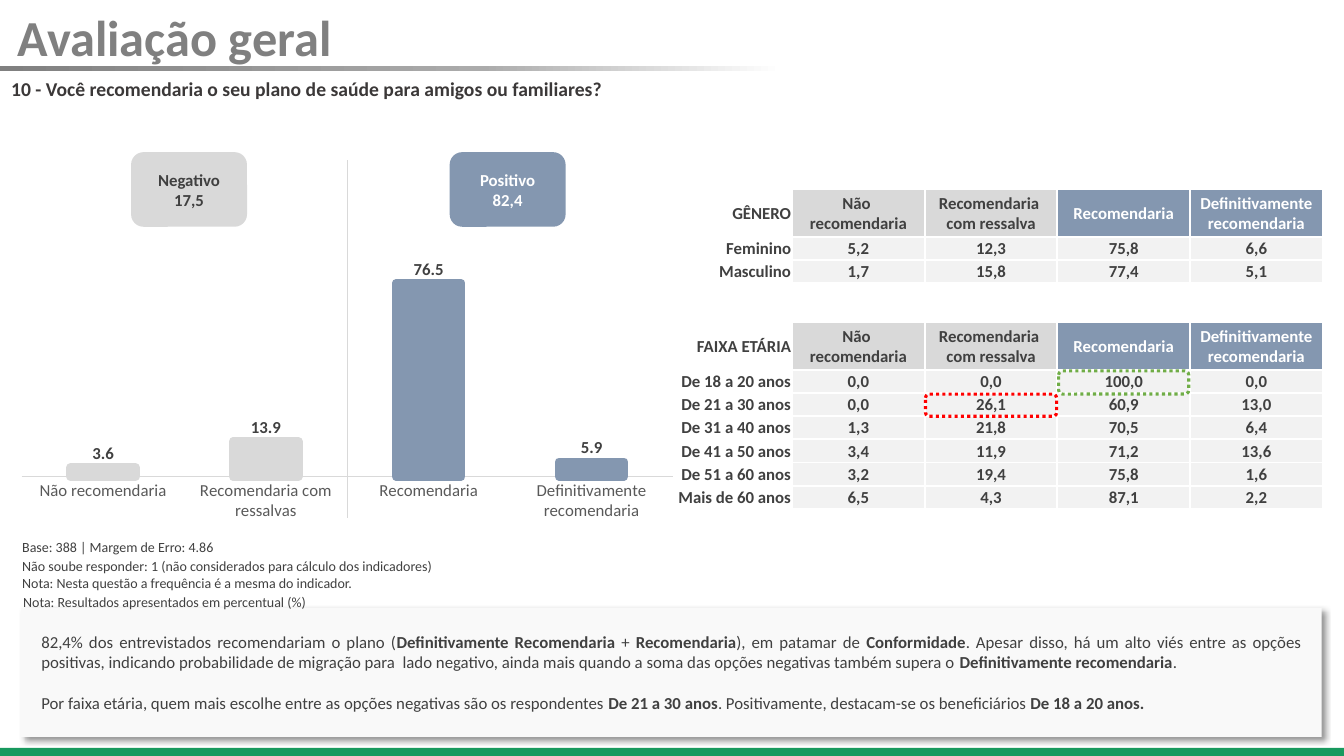
import dataclasses

import lxml.etree
import pptx
import pptx.chart.data
import pptx.dml.color
import pptx.enum.chart
import pptx.enum.dml
import pptx.enum.shapes
import pptx.enum.text
import pptx.oxml
import pptx.oxml.ns
import pptx.util

Inches, Pt = pptx.util.Inches, pptx.util.Pt
RGB = pptx.dml.color.RGBColor.from_string
Align, Anchor = pptx.enum.text.PP_ALIGN, pptx.enum.text.MSO_ANCHOR
Shape = pptx.enum.shapes.MSO_SHAPE
NS = 'xmlns:a="http://schemas.openxmlformats.org/drawingml/2006/main"'


@dataclasses.dataclass(frozen=True)
class Theme:
    font: str = "Calibri"
    title: int = 36
    question: int = 14
    body: int = 12
    note: int = 10
    gray: str = "808080"
    ink: str = "3B3838"
    text: str = "404040"
    axis_text: str = "595959"
    negative: str = "D9D9D9"
    positive: str = "8497B0"
    cell: str = "F2F2F2"
    panel: str = "F9F9F9"
    white: str = "FFFFFF"
    green: str = "18995E"
    high: str = "70AD47"
    low: str = "FF0000"


@dataclasses.dataclass(frozen=True)
class Box:
    left: float
    top: float
    width: float
    height: float

    def emu(self) -> tuple:
        return tuple(Inches(v) for v in (self.left, self.top, self.width, self.height))


@dataclasses.dataclass(frozen=True)
class Badge:
    text: str
    left: float
    fill: str
    color: str


@dataclasses.dataclass(frozen=True)
class Highlight:
    box: Box
    color: str


T = Theme()
HEADS = ["Não \nrecomendaria", "Recomendaria \ncom ressalva", "Recomendaria",
         "Definitivamente\nrecomendaria"]
SHADES = [T.negative, T.negative, T.positive, T.positive]
PROFILE = [
    ["GÊNERO", *HEADS],
    ["Feminino", "5,2", "12,3", "75,8", "6,6"],
    ["Masculino", "1,7", "15,8", "77,4", "5,1"],
    [],
    ["FAIXA ETÁRIA", *HEADS],
    ["De 18 a 20 anos", "0,0", "0,0", "100,0", "0,0"],
    ["De 21 a 30 anos", "0,0", "26,1", "60,9", "13,0"],
    ["De 31 a 40 anos", "1,3", "21,8", "70,5", "6,4"],
    ["De 41 a 50 anos", "3,4", "11,9", "71,2", "13,6"],
    ["De 51 a 60 anos", "3,2", "19,4", "75,8", "1,6"],
    ["Mais de 60 anos", "6,5", "4,3", "87,1", "2,2"],
]
NOTES = [
    ["Base: 388 | Margem de Erro: 4.86"],
    ["Não soube responder: 1 (não considerados para cálculo dos indicadores)",
     "Nota: Nesta questão a frequência é a mesma do indicador."],
    ["Nota: Resultados apresentados em percentual (%)"],
]
RATINGS = {"Não recomendaria": 3.6, "Recomendaria com ressalvas": 13.9,
           "Recomendaria": 76.5, "Definitivamente recomendaria": 5.9}
# Every second piece of a paragraph is bold.
FINDINGS = [
    ["82,4% dos entrevistados recomendariam o plano (", "Definitivamente Recomendaria ", "+",
     " Recomendaria", "), em patamar de ", "Conformidade",
     ". Apesar disso, há um alto viés entre as opções positivas, indicando probabilidade de "
     "migração para  lado negativo, ainda mais quando a soma das opções negativas também supera o ",
     "Definitivamente recomendaria", "."],
    ["Por faixa etária, quem mais escolhe entre as opções negativas são os respondentes ",
     "De 21 a 30 anos", ". Positivamente, destacam-se os beneficiários ", "De 18 a 20 anos."],
]
BADGES = [Badge("Positivo\n82,4", 4.46, T.positive, T.white),
          Badge("Negativo\n17,5", 1.3, T.negative, T.text)]
HIGHLIGHTS = [Highlight(Box(9.18, 3.91, 1.3, 0.22), T.low),
              Highlight(Box(10.5, 3.68, 1.29, 0.23), T.high)]


def style(font, size: int, color: str, bold: bool = False) -> None:
    font.name, font.size, font.bold = T.font, Pt(size), bold
    font.color.rgb = RGB(color)


def write(p, text: str, size: int, color: str, bold: bool = False, align=Align.LEFT) -> None:
    p.text, p.alignment = text, align
    for r in p.runs:
        style(r.font, size, color, bold)


def add_shape(slide, kind, box: Box, fill: str | None = None):
    sp = slide.shapes.add_shape(kind, *box.emu())
    sp.shadow.inherit = False
    sp.line.fill.background()
    if fill:
        sp.fill.solid()
        sp.fill.fore_color.rgb = RGB(fill)
    else:
        sp.fill.background()
    return sp


def add_text(slide, box: Box, text: str, size: int, color: str):
    tf = slide.shapes.add_textbox(*box.emu()).text_frame
    tf.word_wrap, tf.vertical_anchor = True, Anchor.MIDDLE
    write(tf.paragraphs[0], text, size, color, True)
    return tf


def add_title_rule(slide) -> None:
    sp = add_shape(slide, Shape.RECTANGLE, Box(0, 0.65, 8.53, 0.05))
    sp.fill.gradient()
    sp.fill.gradient_angle = 0
    stops = sp.fill._fill._gradFill.find(pptx.oxml.ns.qn("a:gsLst"))
    stops.clear()
    for pos, color in [(0, T.gray), (56, "ABABAB"), (91, T.white)]:
        stops.append(pptx.oxml.parse_xml(
            f'<a:gs {NS} pos="{pos * 1000}"><a:srgbClr val="{color}"/></a:gs>'))


def add_plain_table(slide, box: Box, widths: list[float], heights: list[float]):
    """Add a table with no banding and no built-in style."""
    tbl = slide.shapes.add_table(len(heights), len(widths), *box.emu()).table
    tbl.first_row = tbl.horz_banding = False
    style_id = tbl._tbl.tblPr.find(pptx.oxml.ns.qn("a:tableStyleId"))
    style_id.text = "{2D5ABB26-0587-4C30-8999-92F81FD0307C}"
    for col, width in zip(tbl.columns, widths):
        col.width = Inches(width)
    for row, height in zip(tbl.rows, heights):
        row.height = Inches(height)
    for cell in tbl.iter_cells():
        cell.margin_left = cell.margin_right = cell.margin_top = Inches(0.01)
        cell.margin_bottom = 0
        cell.vertical_anchor = Anchor.MIDDLE
        cell.fill.background()
        end = cell.text_frame.paragraphs[0]._p.get_or_add_endParaRPr()
        end.set("sz", str(T.note * 100))
    return tbl


def add_borders(cell) -> None:
    tc_pr = cell._tc.get_or_add_tcPr()
    for i, side in enumerate(("lnL", "lnR", "lnT", "lnB")):
        tc_pr.insert(i, pptx.oxml.parse_xml(
            f'<a:{side} {NS} w="{Pt(1.5)}"><a:solidFill><a:srgbClr val="{T.white}"/>'
            f'</a:solidFill></a:{side}>'))


def add_profile_table(slide) -> None:
    heights = [0.39 if not row else 0.47 if row[1:] == HEADS else 0.23 for row in PROFILE]
    tbl = add_plain_table(slide, Box(6.54, 1.88, 6.58, 3.17), [6.58 / 5] * 5, heights)
    for cell in tbl.iter_cells():
        add_borders(cell)
    for i, row in enumerate(PROFILE):
        for j, text in enumerate(row):
            cell, head = tbl.cell(i, j), row[1:] == HEADS
            fill = SHADES[j - 1] if head else T.cell
            if j:
                cell.fill.solid()
                cell.fill.fore_color.rgb = RGB(fill)
            color = T.white if j and fill == T.positive else T.text
            write(cell.text_frame.paragraphs[0], text, T.body, color, True,
                  Align.CENTER if j else Align.RIGHT)


def add_notes_table(slide) -> None:
    tbl = add_plain_table(slide, Box(0.22, 5.32, 4.24, 0.75), [3.53, 0.71], [0.21, 0.34, 0.21])
    tbl.cell(1, 0).merge(tbl.cell(1, 1))
    for i, lines in enumerate(NOTES):
        cell = tbl.cell(i, 0)
        cell.margin_left = Inches(0.01 if i == 2 else 0)
        cell.text_frame.text = "\n".join(lines)
        for p in cell.text_frame.paragraphs:
            style(p.runs[0].font, T.note, T.text)


def add_findings(slide) -> None:
    sp = add_shape(slide, Shape.RECTANGLE, Box(0.21, 6.03, 12.9, 1.28), T.panel)
    sp._element.spPr.find(pptx.oxml.ns.qn("a:effectLst")).append(pptx.oxml.parse_xml(
        f'<a:outerShdw {NS} blurRad="{Pt(4)}" dist="{Pt(3)}" dir="2700000" algn="tl" '
        'rotWithShape="0"><a:srgbClr val="000000"><a:alpha val="40000"/></a:srgbClr></a:outerShdw>'))
    tf = sp.text_frame
    tf.word_wrap, tf.vertical_anchor = True, Anchor.MIDDLE
    tf.margin_left = tf.margin_right = Inches(0.2)
    tf.margin_top = tf.margin_bottom = Inches(0.04)
    for i, pieces in enumerate(FINDINGS):
        p = tf.add_paragraph() if i else tf.paragraphs[0]
        p.alignment = Align.JUSTIFY
        if i:
            p.space_before = Pt(14.6)
        for j, text in enumerate(pieces):
            r = p.add_run()
            r.text = text
            style(r.font, T.body, T.text, j % 2 == 1)


def add_rating_chart(slide) -> None:
    data = pptx.chart.data.CategoryChartData(number_format="0.0")
    data.categories = list(RATINGS)
    data.add_series("Series 1", list(RATINGS.values()))
    chart = slide.shapes.add_chart(pptx.enum.chart.XL_CHART_TYPE.COLUMN_CLUSTERED,
                                   *Box(0.08, 2.16, 6.73, 3.06).emu(), data).chart
    chart.has_legend = chart.has_title = False
    style(chart.font, T.note, "000000")
    axis = chart.category_axis
    axis.major_tick_mark = pptx.enum.chart.XL_TICK_MARK.NONE
    style(axis.tick_labels.font, T.body, T.axis_text)
    axis.format.line.color.rgb, axis.format.line.width = RGB(T.negative), Pt(0.75)
    scale = chart.value_axis
    scale.minimum_scale, scale.maximum_scale = 0, 100
    scale.has_major_gridlines = scale.visible = False
    plot = chart.plots[0]
    plot.gap_width, plot.overlap, plot.vary_by_categories = 150, -25, False
    plot.has_data_labels = True
    labels = plot.data_labels
    labels.show_value, labels.number_format, labels.number_format_is_linked = True, "0.0", False
    labels.position = pptx.enum.chart.XL_LABEL_POSITION.OUTSIDE_END
    style(labels.font, T.body, T.text, True)
    for i, shade in enumerate(SHADES):
        bar = plot.series[0].points[i].format
        bar.fill.solid()
        bar.fill.fore_color.rgb = bar.line.color.rgb = RGB(shade)
        bar.line.width = Pt(6)
        lxml.etree.SubElement(bar.line._ln, pptx.oxml.ns.qn("a:round"))
    area = chart._chartSpace.chart.plotArea
    for layout in area.findall(pptx.oxml.ns.qn("c:layout")):
        area.remove(layout)
    frame = "".join(f'<c:{k} val="{v}"/>' for k, v in [
        ("layoutTarget", "inner"), ("xMode", "edge"), ("yMode", "edge"),
        ("x", 0.02), ("y", 0.02), ("w", 0.96), ("h", 0.82)])
    area.insert(0, pptx.oxml.parse_xml(
        '<c:layout xmlns:c="http://schemas.openxmlformats.org/drawingml/2006/chart">'
        f'<c:manualLayout>{frame}</c:manualLayout></c:layout>'))


def add_badge(slide, badge: Badge) -> None:
    sp = add_shape(slide, Shape.ROUNDED_RECTANGLE, Box(badge.left, 1.51, 1.15, 0.74), badge.fill)
    sp.text_frame.vertical_anchor = Anchor.MIDDLE
    write(sp.text_frame.paragraphs[0], badge.text, T.body, badge.color, True, Align.CENTER)


def add_divider(slide) -> None:
    line = slide.shapes.add_connector(pptx.enum.shapes.MSO_CONNECTOR.STRAIGHT, Inches(3.45),
                                      Inches(1.59), Inches(3.45), Inches(5.14))
    line.line.color.rgb, line.line.width = RGB(T.negative), Pt(0.5)
    lxml.etree.SubElement(line._element.spPr, pptx.oxml.ns.qn("a:effectLst"))


def main() -> None:
    prs = pptx.Presentation()
    prs.slide_width, prs.slide_height = Inches(13.33), Inches(7.5)
    slide = prs.slides.add_slide(prs.slide_layouts[6])
    add_title_rule(slide)
    add_shape(slide, Shape.RECTANGLE, Box(0, 7.42, 13.33, 0.08), T.green)
    question = "10 - Você recomendaria o seu plano de saúde para amigos ou familiares?"
    tf = add_text(slide, Box(0, 0.7, 13.02, 0.35), question, T.question, T.ink)
    tf.margin_left = tf.margin_right = Inches(0.11)
    add_profile_table(slide)
    add_findings(slide)
    tf = add_text(slide, Box(0.08, 0.06, 13.11, 0.68), "Avaliação geral", T.title, T.gray)
    tf.paragraphs[0].line_spacing = 0.9
    for mark in HIGHLIGHTS:
        sp = add_shape(slide, Shape.ROUNDED_RECTANGLE, mark.box)
        sp.line.color.rgb, sp.line.width = RGB(mark.color), Pt(2.25)
        sp.line.dash_style = pptx.enum.dml.MSO_LINE.ROUND_DOT
    add_notes_table(slide)
    add_rating_chart(slide)
    for badge in BADGES:
        add_badge(slide, badge)
    add_divider(slide)
    prs.save("out.pptx")


if __name__ == "__main__":
    main()
